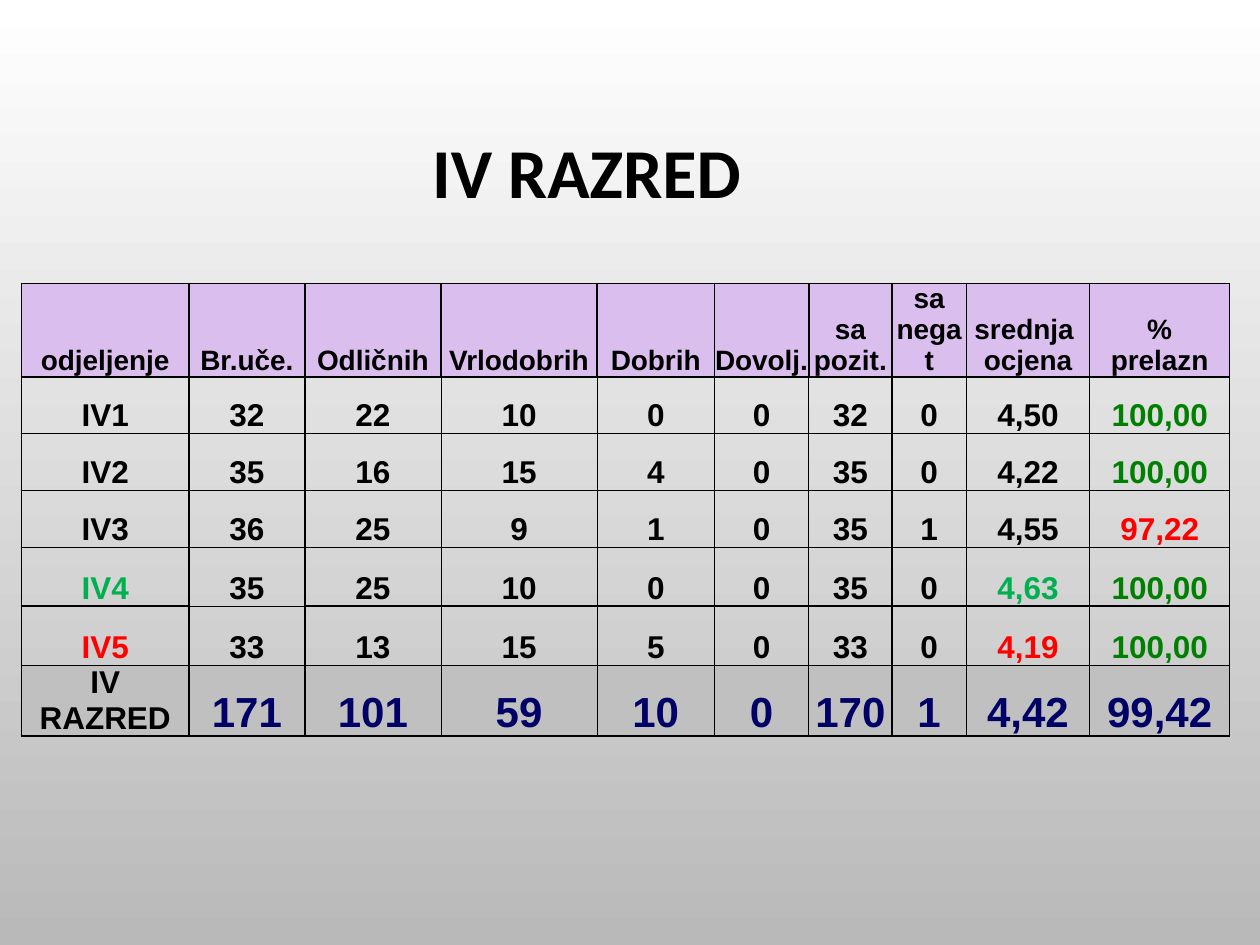
from lxml import etree
from pptx import Presentation
from pptx.dml.color import RGBColor
from pptx.enum import text
from pptx.oxml.ns import qn
from pptx.util import Inches, Pt

COLORS = {"black": "000000", "header": "DABEED", "total": "C0C0C0", "navy": "000066",
          "pass": "008000", "best": "00B050", "worst": "FF0000",
          "bg_top": "FFFFFF", "bg_bottom": "B9B9B9"}

TITLE = "IV RAZRED"
ROWS = [
    ["odjeljenje", "Br.uče.", "Odličnih", "Vrlodobrih", "Dobrih", "Dovolj.",
     "sa pozit.", "sa negat", "srednja \nocjena", "%\nprelazn"],
    ["IV1", "32", "22", "10", "0", "0", "32", "0", "4,50", "100,00"],
    ["IV2", "35", "16", "15", "4", "0", "35", "0", "4,22", "100,00"],
    ["IV3", "36", "25", "9", "1", "0", "35", "1", "4,55", "97,22"],
    ["IV4", "35", "25", "10", "0", "0", "35", "0", "4,63", "100,00"],
    ["IV5", "33", "13", "15", "5", "0", "33", "0", "4,19", "100,00"],
    ["IV RAZRED", "171", "101", "59", "10", "0", "170", "1", "4,42", "99,42"],
]
COL_WIDTHS = [1.33, 0.92, 1.08, 1.24, 0.93, 0.75, 0.66, 0.59, 0.98, 1.11]
ROW_HEIGHTS = [0.66, 0.45, 0.45, 0.45, 0.47, 0.47, 0.47]
TOTAL = len(ROWS) - 1
LAST_COL = len(COL_WIDTHS) - 1

# Grid lines drawn at 1 pt; the others are 0.5 pt
HEAVY_V = {0, 1, 2, 7, 8, 10}
HEAVY_H = {0, 1, 5, 6, 7}
THIN_IN_COUNT_COLUMN = {5, 6}

# Text colours that differ from black
ACCENTS = {(4, 0): "best", (4, 8): "best", (5, 0): "worst", (5, 8): "worst",
           (3, LAST_COL): "worst"}


def rgb(name):
    return RGBColor.from_string(COLORS[name])


def write(tf, content, size, font="Arial", color="black", align=text.PP_ALIGN.CENTER,
          anchor=None, line=None, after=None):
    tf.text = content
    tf.word_wrap = True
    if anchor is not None:
        tf.vertical_anchor = anchor
    for p in tf.paragraphs:
        p.alignment, p.line_spacing = align, line
        if after is not None:
            p.space_after = Pt(after)
        for r in p.runs:
            f = r.font
            f.name, f.size, f.bold = font, Pt(size), True
            f.color.rgb = rgb(color)


def text_style(row, col):
    if row == 0:
        return 16, "black"
    if row == TOTAL:
        return (24, "navy") if col else (18, "black")
    return 18, ACCENTS.get((row, col), "pass" if col == LAST_COL else "black")


def border_widths(row, col):
    def vertical(edge):
        return 1 if row == 0 or edge in HEAVY_V else 0.5

    def horizontal(edge):
        thin = col == 1 and edge in THIN_IN_COUNT_COLUMN
        return 1 if edge in HEAVY_H and not thin else 0.5

    return {"lnL": vertical(col), "lnR": vertical(col + 1),
            "lnT": horizontal(row), "lnB": horizontal(row + 1)}


def set_borders(cell, widths):
    tcPr = cell._tc.get_or_add_tcPr()
    for i, (tag, width) in enumerate(widths.items()):
        ln = etree.Element(qn("a:" + tag), w=str(Pt(width)))
        fill = etree.SubElement(ln, qn("a:solidFill"))
        etree.SubElement(fill, qn("a:srgbClr"), val=COLORS["black"])
        tcPr.insert(i, ln)


prs = Presentation()
prs.slide_width, prs.slide_height = Inches(10), Inches(7.5)
s = prs.slides.add_slide(prs.slide_layouts[5])

# Background
bg = s.background.fill
bg.gradient()
bg.gradient_angle = 270
for stop, name in zip(bg.gradient_stops, ("bg_top", "bg_bottom")):
    stop.color.rgb = rgb(name)
bg.gradient_stops[0].position, bg.gradient_stops[1].position = 0, 1

# Title
title = s.shapes.title
title.left, title.top, title.width, title.height = map(Inches, (3.33, 0.92, 3.56, 0.79))
write(title.text_frame, TITLE, 40, font="Calibri", align=text.PP_ALIGN.LEFT,
      anchor=text.MSO_ANCHOR.TOP, line=1.07, after=8)

# Results table
table = s.shapes.add_table(len(ROWS), len(COL_WIDTHS), Inches(0.17), Inches(2.25),
                           Inches(9.58), Inches(3.56)).table
table.first_row = table.horz_banding = False
for column, width in zip(table.columns, COL_WIDTHS):
    column.width = Inches(width)
for row, height in zip(table.rows, ROW_HEIGHTS):
    row.height = Inches(height)
for i, values in enumerate(ROWS):
    for j, value in enumerate(values):
        cell = table.cell(i, j)
        cell.margin_left = cell.margin_right = cell.margin_top = cell.margin_bottom = 0
        cell.vertical_anchor = text.MSO_ANCHOR.BOTTOM
        size, color = text_style(i, j)
        write(cell.text_frame, value, size, color=color)
        if i in (0, TOTAL):
            cell.fill.solid()
            cell.fill.fore_color.rgb = rgb("total" if i else "header")
        else:
            cell.fill.background()
        set_borders(cell, border_widths(i, j))

prs.save("out.pptx")
